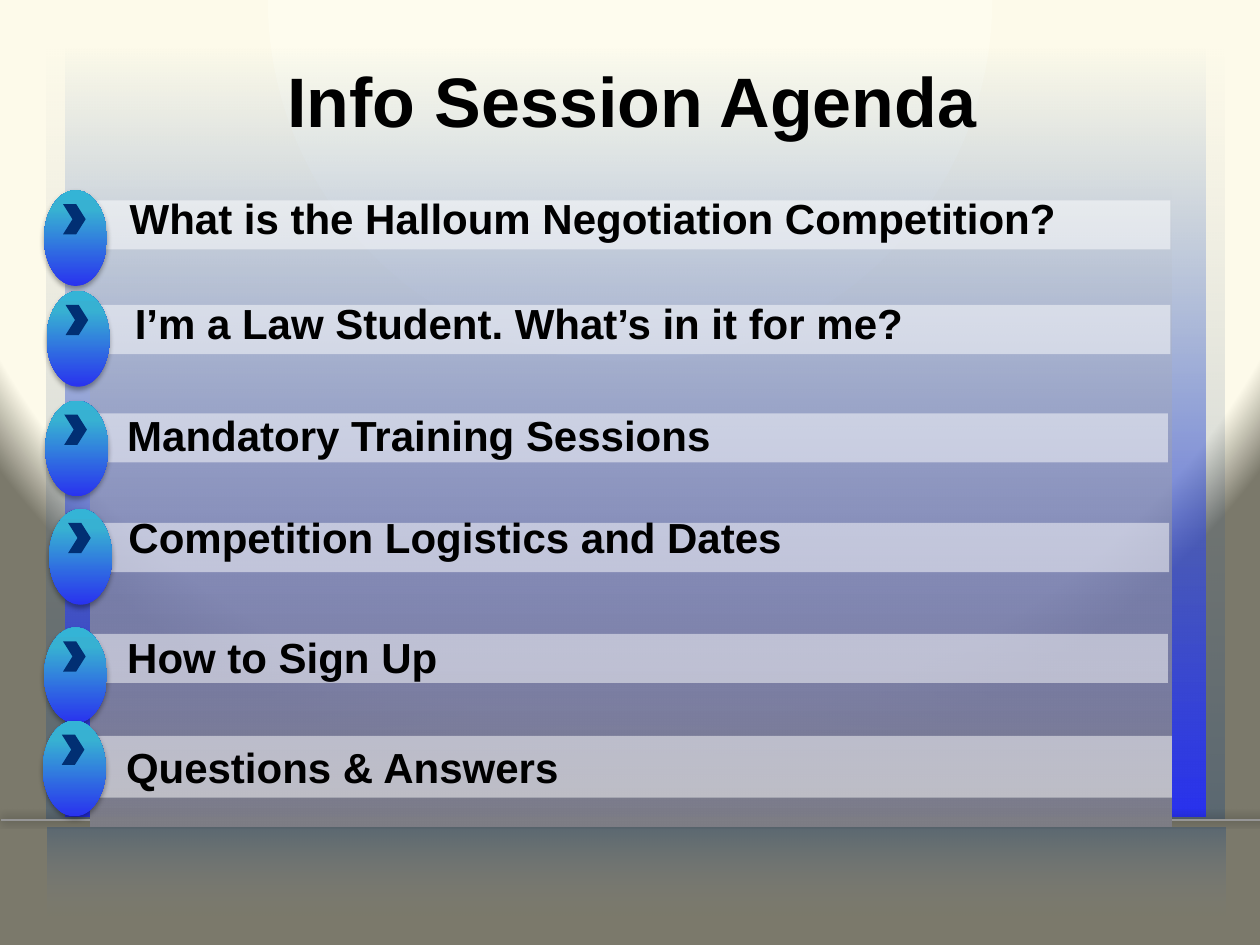
import pptx
import pptx.util
from pptx.dml.color import RGBColor
from pptx.enum.shapes import MSO_CONNECTOR, MSO_SHAPE
from pptx.enum.text import MSO_ANCHOR, PP_ALIGN
from pptx.oxml import parse_xml
from pptx.oxml.ns import nsdecls, qn
from pptx.util import Inches

TITLE = "Info Session Agenda"
# text, bar (left, top), marker (left, top), text (left, top)
AGENDA = [
    ("What is the Halloum Negotiation Competition?", (0.71, 1.59), (0.35, 1.51), (1.03, 1.5)),
    ("I’m a Law Student. What’s in it for me?", (0.71, 2.42), (0.37, 2.31), (1.07, 2.33)),
    ("Mandatory Training Sessions", (0.69, 3.28), (0.36, 3.18), (1.01, 3.22)),
    ("Competition Logistics and Dates", (0.7, 4.15), (0.39, 4.04), (1.02, 4.03)),
    ("How to Sign Up", (0.69, 5.03), (0.35, 4.98), (1.01, 4.98)),
]
CLOSING = ("Questions & Answers", (0.72, 5.84), (0.34, 5.72))
UP, DOWN = 270, 90
SLATE = [(0, "1F497D", 35), (100, "7B869F", 0)]
# left, top, width, height, gradient stops (position, colour, opacity), direction
FRAMES = [
    (0.37, 0.36, 9.35, 6.15, SLATE, UP),
    (0.38, 6.57, 9.35, 0.7, SLATE, DOWN),
    (0.52, 0.36, 9.05, 6.12, [(0, "2932EF", 100), (100, "4F81BD", 0)], UP),
]
PANEL = (0.72, 1.48, 8.58, 5.08, [(0, "7E7E86", 100), (100, "C0C0C0", 0)], UP)
MARKER = [(0, "2932EF", 100), (80, "37B1D2", 100), (100, "34B4D6", 100)]
BACKDROP = [(0, "FEFCEE", 100), (92, "FDFAEA", 100), (100, "7B796B", 100)]


def rgb(value):
    return RGBColor.from_string(value)


def set_gradient(fill, element, stops, angle=None):
    """Linear gradient at an angle, or the circular backdrop when none is given."""
    fill.gradient()
    old = element.find(".//" + qn("a:gradFill"))
    gs = "".join(
        f'<a:gs pos="{pos * 1000}"><a:srgbClr val="{color}">'
        f'<a:alpha val="{alpha * 1000}"/></a:srgbClr></a:gs>'
        for pos, color, alpha in stops)
    if angle is None:
        shade = ('<a:path path="circle"><a:fillToRect l="50000" t="-80000" '
                 'r="50000" b="180000"/></a:path>')
    else:
        shade = f'<a:lin ang="{angle * 60000}" scaled="0"/>'
    new = parse_xml(f'<a:gradFill {nsdecls("a")} rotWithShape="1">'
                    f'<a:gsLst>{gs}</a:gsLst>{shade}</a:gradFill>')
    old.getparent().replace(old, new)


def set_shadow(shape, alpha, blur, dist, angle):
    shape._element.spPr.append(parse_xml(
        f'<a:effectLst {nsdecls("a")}><a:outerShdw blurRad="{int(blur * 12700)}" '
        f'dist="{int(dist * 12700)}" dir="{angle * 60000}" algn="ctr" rotWithShape="0">'
        f'<a:srgbClr val="000000"><a:alpha val="{alpha * 1000}"/></a:srgbClr>'
        '</a:outerShdw></a:effectLst>'))


def add_plain(shapes, kind, left, top, width, height):
    sp = shapes.add_shape(kind, *map(Inches, (left, top, width, height)))
    sp.line.fill.background()
    return sp


def add_gradient_box(left, top, width, height, stops, angle):
    sp = add_plain(s.shapes, MSO_SHAPE.RECTANGLE, left, top, width, height)
    sp.shadow.inherit = False
    set_gradient(sp.fill, sp._element, stops, angle)
    return sp


def add_bar(left, top, height=0.39):
    sp = add_plain(s.shapes, MSO_SHAPE.RECTANGLE, left, top, 8.58, height)
    sp.shadow.inherit = False
    sp.fill.solid()
    sp.fill.fore_color.rgb = rgb("FFFFFF")
    color = sp._element.spPr.find(qn("a:solidFill"))[0]
    color.append(parse_xml(f'<a:alpha {nsdecls("a")} val="50000"/>'))
    return sp


def add_marker(left, top):
    group = s.shapes.add_group_shape()
    oval = add_plain(group.shapes, MSO_SHAPE.OVAL, left, top, 0.5, 0.76)
    set_gradient(oval.fill, oval._element, MARKER, UP)
    set_shadow(oval, 35, 3.1, 1.8, 90)
    chevron = add_plain(group.shapes, MSO_SHAPE.CHEVRON, left + 0.15, top + 0.11, 0.18, 0.24)
    chevron.adjustments[0] = 0.42
    chevron.shadow.inherit = False
    chevron.fill.solid()
    chevron.fill.fore_color.rgb = rgb("012F73")


def set_text(shape, text, size=24, align=PP_ALIGN.LEFT, anchor=MSO_ANCHOR.MIDDLE, inset=0):
    tf = shape.text_frame
    tf.text = text
    tf.word_wrap = True
    tf.vertical_anchor = anchor
    tf.margin_left = Inches(inset)
    tf.margin_right = tf.margin_top = tf.margin_bottom = 0
    p = tf.paragraphs[0]
    p.alignment = align
    font = p.runs[0].font
    font.name, font.size, font.bold = "Arial", pptx.util.Pt(size), True
    font.color.rgb = rgb("000000")
    return p


prs = pptx.Presentation()
prs.slide_width, prs.slide_height = Inches(10), Inches(7.5)
s = prs.slides.add_slide(prs.slide_layouts[5])
set_gradient(s.background.fill, s._element, BACKDROP)

for frame in FRAMES:
    add_gradient_box(*frame)
floor = s.shapes.add_connector(
    MSO_CONNECTOR.STRAIGHT, Inches(0.01), Inches(6.51), Inches(10.09), Inches(6.51))
floor.line.color.rgb = rgb("969696")
floor.line.width = pptx.util.Pt(1)
set_shadow(floor, 55, 5, 1, 270)
panel = add_gradient_box(*PANEL)

title = s.shapes.title
title.left, title.top, title.width, title.height = map(Inches, (0.52, 0.56, 8.99, 0.53))
set_text(title, TITLE, 40, PP_ALIGN.CENTER, MSO_ANCHOR.TOP).line_spacing = 0.85
panel._element.addnext(title._element)

for text, bar, marker, place in AGENDA:
    add_bar(*bar)
    add_marker(*marker)
    box = s.shapes.add_textbox(*map(Inches, (*place, 8.27, 0.46)))
    set_text(box, text)

text, bar, marker = CLOSING
set_text(add_bar(*bar, height=0.49), text, inset=0.28)
add_marker(*marker)

prs.save("out.pptx")
